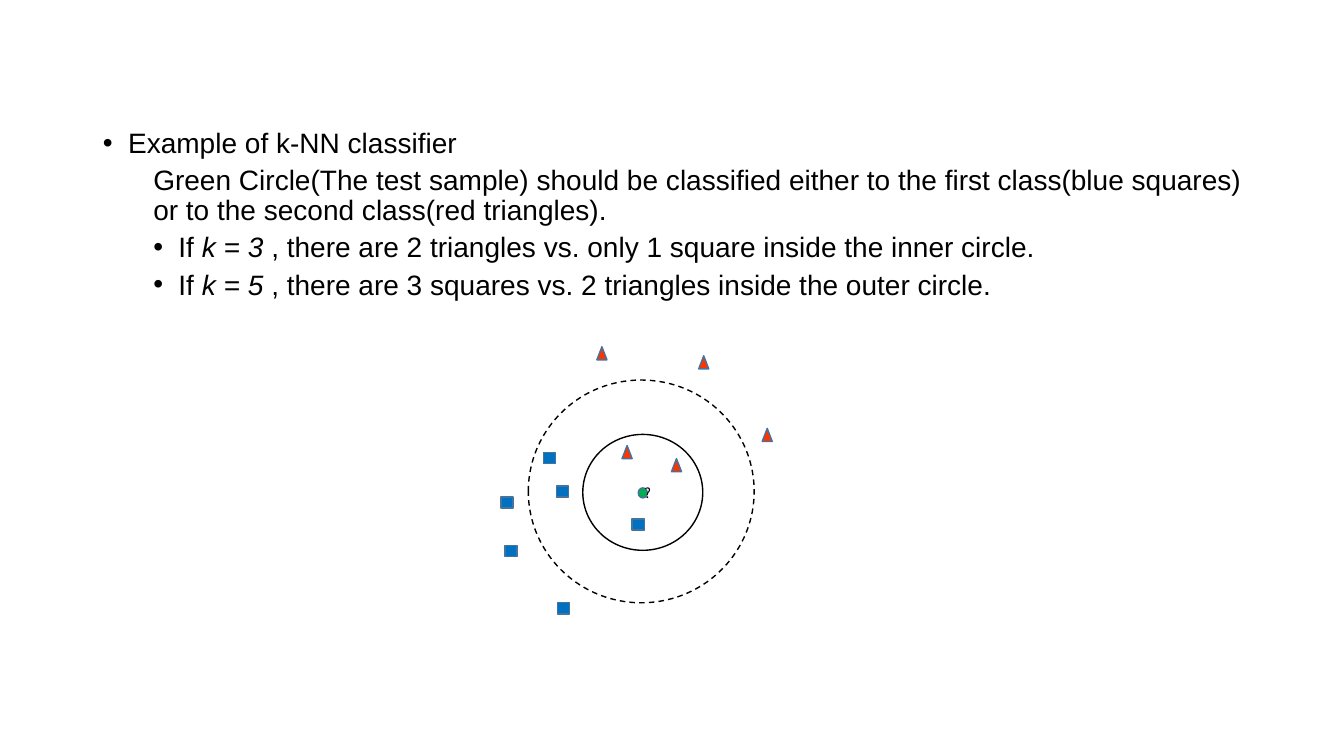
import pptx
import pptx.util
import pptx.dml.color
import pptx.enum.dml
import pptx.enum.shapes
import pptx.enum.text
import lxml.etree

Inches, Pt = pptx.util.Inches, pptx.util.Pt
RGBColor = pptx.dml.color.RGBColor
SHAPE = pptx.enum.shapes.MSO_SHAPE
ALIGN = pptx.enum.text.PP_ALIGN

BLACK = RGBColor(0x00, 0x00, 0x00)
GREEN = RGBColor(0x00, 0xB0, 0x50)
RED = RGBColor(0xFF, 0x33, 0x00)
BLUE = RGBColor(0x00, 0x70, 0xC0)
EDGE = RGBColor(0x43, 0x73, 0x9E)

# Content: (level, bullet, margin, runs), a run being (text, italic)
LINES = [
    (0, True, 0.25, [("Example of k-NN classifier", False)]),
    (1, False, 0.5, [("Green Circle(The test sample) should be classified either to the "
                      "first class(blue squares) or to the second class(red triangles). ", False)]),
    (1, True, 0.75, [("If ", False), ("k = 3 ", True),
                     (", there are 2 triangles vs. only 1 square inside the inner circle. ", False)]),
    (1, True, 0.75, [("If ", False), ("k = 5 ", True),
                     (", there are 3 squares vs. 2 triangles inside the outer circle.", False)]),
]
INNER_CIRCLE = (5.78, 4.31, 1.19, 1.15)
OUTER_CIRCLE = (5.24, 3.77, 2.24, 2.21)
TEST_SAMPLE = (6.33, 4.84, 0.09, 0.1)
QUESTION_MARK = (6.38, 4.76, 0.09, 0.27)
TRIANGLE_SIZE = (0.1, 0.13)
TRIANGLES = [(6.17, 4.42), (6.66, 4.55), (7.56, 4.25), (6.93, 3.53), (5.92, 3.44)]
SQUARE_SIZE = (0.12, 0.11)
SQUARES = [(4.97, 4.93), (5.01, 5.41), (5.53, 5.98), (5.39, 4.49), (6.27, 5.15), (5.52, 4.82)]


def set_bullet(p, bullet, margin):
    pPr = p._p.get_or_add_pPr()
    pPr.set("marL", str(Inches(margin)))
    pPr.set("indent", str(Inches(-0.25 if bullet else 0)))
    ns = "{http://schemas.openxmlformats.org/drawingml/2006/main}"
    if bullet:
        lxml.etree.SubElement(pPr, ns + "buFont").set("typeface", "Arial")
        lxml.etree.SubElement(pPr, ns + "buChar").set("char", "•")
    else:
        lxml.etree.SubElement(pPr, ns + "buNone")


def add_mark(group, kind, box, line, fill=None):
    sp = group.shapes.add_shape(kind, *map(Inches, box))
    sp.shadow.inherit = False
    if fill is None:
        sp.fill.background()
    else:
        sp.fill.solid()
        sp.fill.fore_color.rgb = fill
    sp.line.color.rgb = line
    sp.line.width = Pt(1)
    return sp


prs = pptx.Presentation()
prs.slide_width, prs.slide_height = Inches(13.33), Inches(7.5)
s = prs.slides.add_slide(prs.slide_layouts[1])

# The slide shows no title
title = s.shapes.title
title.element.getparent().remove(title.element)

# Explanation
body = s.placeholders[1]
body.left, body.top, body.width, body.height = map(Inches, (0.92, 1.23, 11.5, 5.53))
tf = body.text_frame
tf.auto_size = pptx.enum.text.MSO_AUTO_SIZE.NONE
for i, (level, bullet, margin, runs) in enumerate(LINES):
    p = tf.add_paragraph() if i else tf.paragraphs[0]
    p.level = level
    p.alignment = ALIGN.JUSTIFY if level else ALIGN.LEFT
    p.line_spacing = 0.9
    p.space_before = Pt(5 if level else 10)
    set_bullet(p, bullet, margin)
    for text, italic in runs:
        r = p.add_run()
        r.text = text
        r.font.name, r.font.size = "Arial", Pt(20)
        r.font.italic = italic
        r.font.color.rgb = BLACK

# Neighbourhood circles and the test sample
diagram = s.shapes.add_group_shape()
add_mark(diagram, SHAPE.OVAL, INNER_CIRCLE, BLACK)
outer = add_mark(diagram, SHAPE.OVAL, OUTER_CIRCLE, BLACK)
outer.line.dash_style = pptx.enum.dml.MSO_LINE.DASH
add_mark(diagram, SHAPE.OVAL, TEST_SAMPLE, EDGE, GREEN)

mark = diagram.shapes.add_textbox(*map(Inches, QUESTION_MARK))
tf = mark.text_frame
tf.word_wrap = False
tf.margin_left = tf.margin_right = 0
tf.text = "?"
p = tf.paragraphs[0]
p.alignment = ALIGN.CENTER
p.runs[0].font.name, p.runs[0].font.size = "Noto Sans CJK KR", Pt(10)
p.runs[0].font.color.rgb = BLACK

# The two classes
for kind, size, spots, colour in [
    (SHAPE.ISOSCELES_TRIANGLE, TRIANGLE_SIZE, TRIANGLES, RED),
    (SHAPE.RECTANGLE, SQUARE_SIZE, SQUARES, BLUE),
]:
    for spot in spots:
        add_mark(diagram, kind, spot + size, EDGE, colour)

prs.save("out.pptx")
